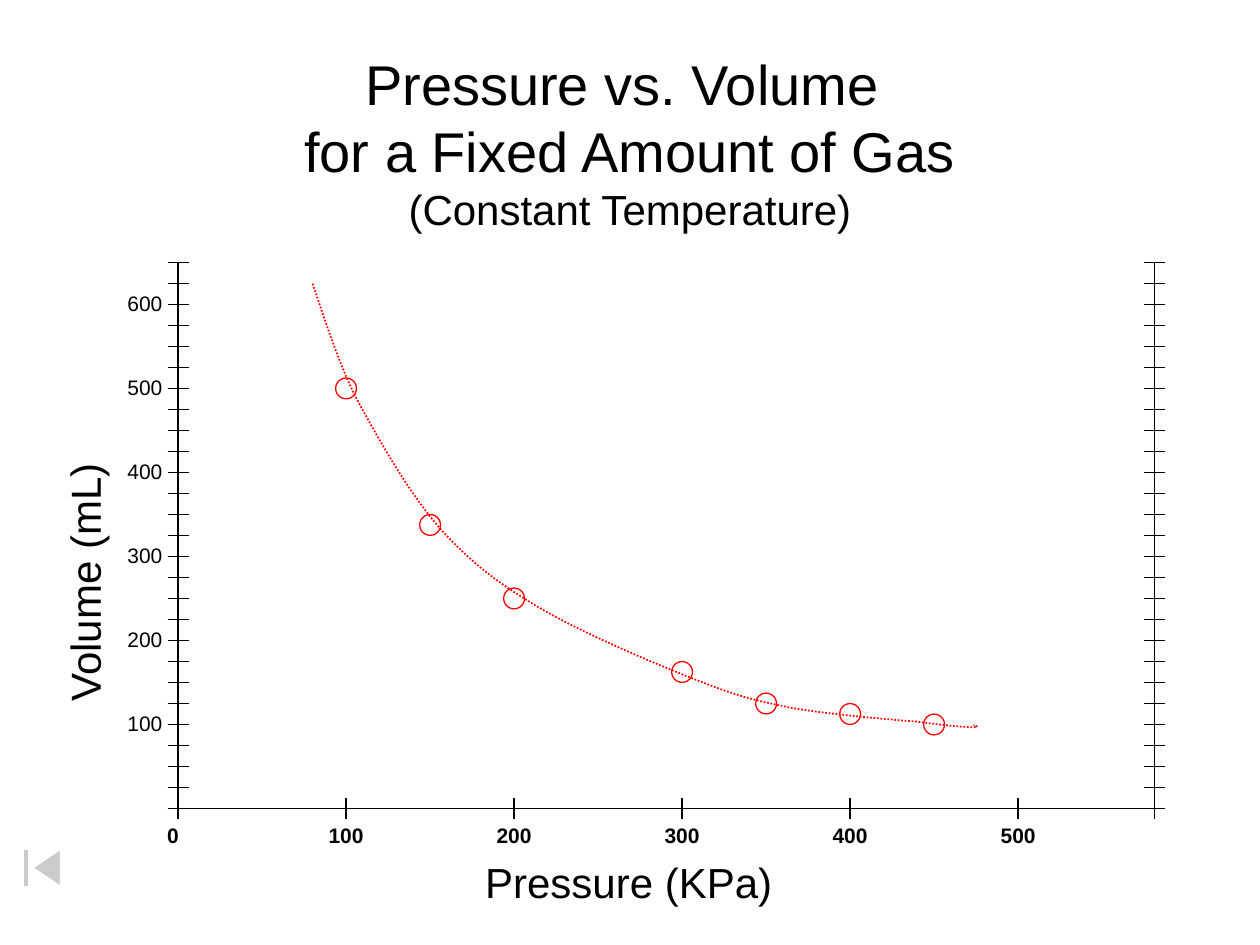
from lxml.etree import SubElement
from pptx import Presentation
from pptx.dml.color import RGBColor
from pptx.enum.dml import MSO_LINE
from pptx.enum.shapes import MSO_CONNECTOR, MSO_SHAPE
from pptx.enum.text import MSO_ANCHOR, PP_ALIGN
from pptx.oxml.ns import qn
from pptx.util import Cm, Pt

BLACK = RGBColor(0, 0, 0)
RED = RGBColor(255, 0, 0)
WHITE = RGBColor(255, 255, 255)

# Plot frame in cm, and its scale
LEFT, RIGHT, TOP, BOTTOM = 3.59, 23.27, 5.29, 16.3
MAX_ML = 650
CM_PER_ML = (BOTTOM - TOP) / MAX_ML
CM_PER_KPA = 3.387 / 100
TICK = 0.21  # half the length of a tick
RADIUS = 0.21

prs = Presentation()
prs.slide_width, prs.slide_height = Cm(25.4), Cm(19.05)
slide = prs.slides.add_slide(prs.slide_layouts[6])
shapes = slide.shapes


def add_line(x1, y1, x2, y2):
    line = shapes.add_connector(MSO_CONNECTOR.STRAIGHT, Cm(x1), Cm(y1), Cm(x2), Cm(y2))
    line.line.color.rgb = BLACK
    line.line.width = Pt(0.75)
    SubElement(line._element.spPr, qn("a:effectLst"))


def add_label(text, left, top, width, height, size, wrap=True):
    label = shapes.add_textbox(Cm(left), Cm(top), Cm(width), Cm(height))
    label.text_frame.word_wrap = wrap
    label.text_frame.text = text
    for paragraph in label.text_frame.paragraphs:
        paragraph.font.name = "Arial"
        paragraph.font.size = Pt(size)
        paragraph.font.color.rgb = BLACK
    return label


# Title, with a smaller last line
title = add_label("Pressure vs. Volume \vfor a Fixed Amount of Gas\v",
                  1.9, 1.27, 21.6, 3.18, 32)
title.text_frame.vertical_anchor = MSO_ANCHOR.MIDDLE
heading = title.text_frame.paragraphs[0]
heading.alignment = PP_ALIGN.CENTER
condition = heading.add_run()
condition.text = "(Constant Temperature)"
condition.font.size = Pt(24)

# Pressure axis
add_line(LEFT, BOTTOM, RIGHT, BOTTOM)
pressure_ticks = [LEFT + kpa * CM_PER_KPA for kpa in range(0, 600, 100)]
for x in pressure_ticks + [RIGHT]:
    add_line(x, BOTTOM - TICK, x, BOTTOM + TICK)

# Volume axes on both sides, a tick every 25 mL
for x in (LEFT, RIGHT):
    add_line(x, BOTTOM, x, TOP)
    for ml in range(0, MAX_ML + 1, 25):
        y = BOTTOM - ml * CM_PER_ML
        add_line(x - TICK, y, x + TICK, y)

# Pressure scale: one line of numbers, centred under the ticks by tab stops
scale_left = 3.12
pressure_scale = add_label("0\t100\t200\t300\t400\t500", scale_left, 16.46, 18.26, 0.76, 12)
numbers = pressure_scale.text_frame.paragraphs[0]
numbers.font.bold = True
tab_stops = SubElement(numbers._p.get_or_add_pPr(), qn("a:tabLst"))
numbers._p.pPr.insert(0, tab_stops)
for x in pressure_ticks[1:]:
    SubElement(tab_stops, qn("a:tab"), pos=str(Cm(x - scale_left - 0.25)), algn="ctr")

# Volume scale
for ml in range(100, 700, 100):
    add_label(str(ml), 2.32, BOTTOM - ml * CM_PER_ML - 0.4, 1.22, 0.76, 12, wrap=False)

# Axis titles
add_label("Volume (mL)", -1.19, 10.87, 5.77, 1.27, 24).rotation = 270
add_label("Pressure (KPa)", 9.53, 17.15, 6.3, 1.27, 24, wrap=False)

# Measured points (kPa, mL)
measurements = [(100, 500), (150, 337.5), (200, 250), (300, 162.5),
                (350, 125), (400, 112.5), (450, 100)]
for kpa, ml in measurements:
    x, y = LEFT + kpa * CM_PER_KPA, BOTTOM - ml * CM_PER_ML
    point = shapes.add_shape(MSO_SHAPE.OVAL, Cm(x - RADIUS), Cm(y - RADIUS),
                             Cm(2 * RADIUS), Cm(2 * RADIUS))
    point.shadow.inherit = False
    point.fill.background()
    point.line.color.rgb = RED
    point.line.width = Pt(0.75)

# Fitted curve: Bezier knots, with two control points between neighbours
bezier = [(6.3, 5.72),
          (6.45, 6.12), (6.78, 7.26), (7.21, 8.08),
          (7.65, 8.89), (8.23, 9.91), (8.84, 10.62),
          (9.45, 11.3), (9.96, 11.71), (10.85, 12.24),
          (11.71, 12.75), (13.26, 13.41), (14.12, 13.74),
          (14.96, 14.07), (15.24, 14.12), (15.95, 14.27),
          (16.69, 14.4), (17.88, 14.5), (18.49, 14.55),
          (19.1, 14.63), (19.43, 14.66), (19.61, 14.66),
          (19.81, 14.66), (19.61, 14.63), (19.63, 14.61)]
STEPS = 10
curve_points = []
for start in range(0, len(bezier) - 1, 3):
    for step in range(1, STEPS + 1):
        t = step / STEPS
        weights = ((1 - t) ** 3, 3 * t * (1 - t) ** 2, 3 * t ** 2 * (1 - t), t ** 3)
        knots = bezier[start:start + 4]
        curve_points.append(tuple(
            Cm(sum(w * knot[axis] for w, knot in zip(weights, knots))) for axis in (0, 1)))
outline = shapes.build_freeform(Cm(bezier[0][0]), Cm(bezier[0][1]))
outline.add_line_segments(curve_points, close=False)
curve = outline.convert_to_shape()
curve.shadow.inherit = False
curve.fill.background()
curve.line.color.rgb = RED
curve.line.width = Pt(1)
curve.line.dash_style = MSO_LINE.ROUND_DOT

# Back-to-start button, half transparent
button = shapes.add_shape(MSO_SHAPE.ACTION_BUTTON_BEGINNING, Cm(0), Cm(17), Cm(1.7), Cm(0.99))
button.shadow.inherit = False
button.fill.solid()
button.fill.fore_color.rgb = WHITE
button_color = button._element.spPr.find(qn("a:solidFill")).find(qn("a:srgbClr"))
SubElement(button_color, qn("a:alpha"), val="50000")
button.line.color.rgb = WHITE
button.line.width = Pt(0.75)

prs.save("out.pptx")
